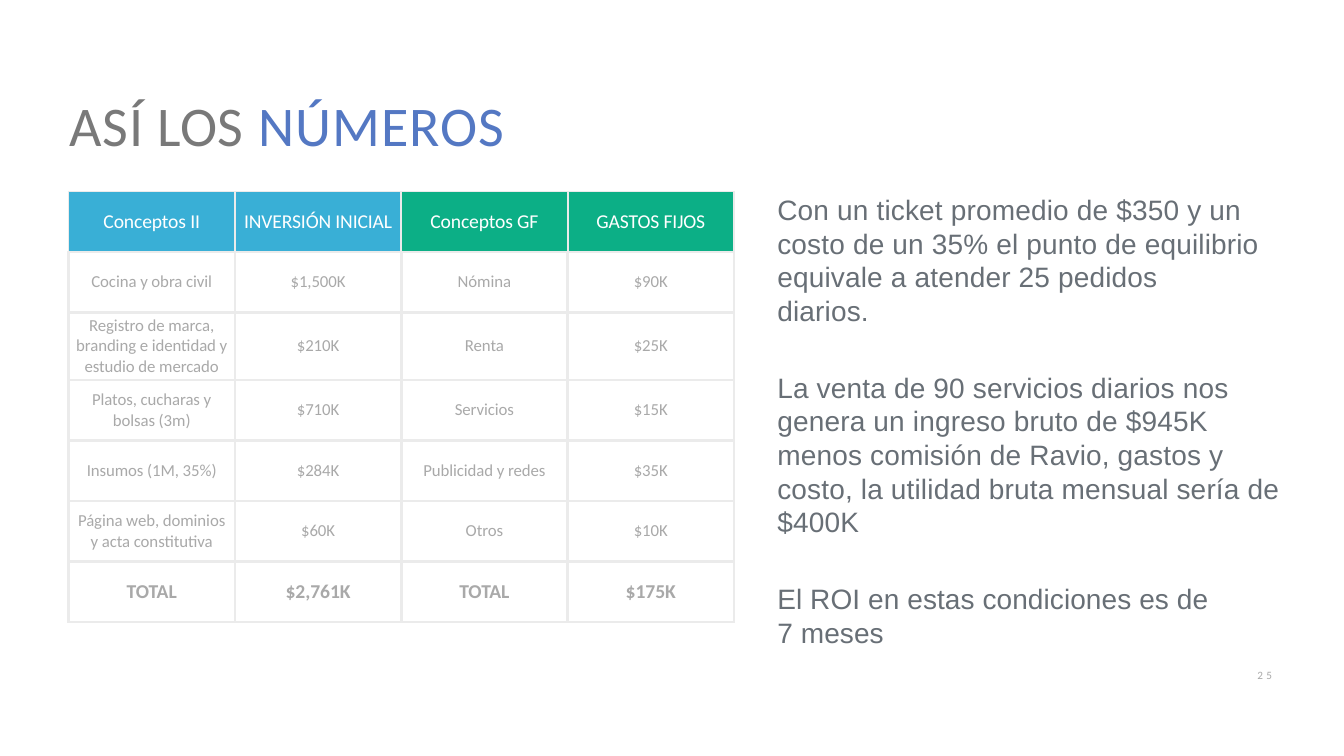
from dataclasses import dataclass

from lxml import etree
from pptx import Presentation
from pptx.dml.color import RGBColor
from pptx.enum.text import MSO_ANCHOR, PP_ALIGN
from pptx.oxml.ns import qn
from pptx.util import Emu, Pt

PX = 9144
CENTER = PP_ALIGN.CENTER
MIDDLE = MSO_ANCHOR.MIDDLE
HUES = {
    "blue": "39AFD6",
    "green": "0CAF86",
    "edge": "EBEBEB",
    "white": "FFFFFF",
    "pale": "A9A9A9",
    "gray": "797979",
    "accent": "5478C3",
    "slate": "686F76",
}


@dataclass(frozen=True)
class Font:
    name: str
    size: int
    hue: str
    space: int = 0
    bold: bool = False


@dataclass(frozen=True)
class Para:
    words: tuple[tuple[str, Font], ...]
    gap: int = 0


@dataclass(frozen=True)
class Box:
    left: int
    top: int
    width: int
    height: int
    paras: tuple[Para, ...]


HEAD = Font("Calibri", 14, "white", -10)
CELL = Font("Calibri", 12, "pale", -7)
TOTAL = Font("Calibri", 14, "pale", -5, True)
BODY = Font("Arial", 20, "slate", 12)
LAST = Font("Arial", 20, "slate", 5)
TITLE = Font("Calibri", 40, "gray", 55)
ACCENT = Font("Calibri", 40, "accent", 80)
PAGE = Font("Calibri", 8, "pale", 30)

ROWS = (
    ("Conceptos II", "INVERSIÓN INICIAL", "Conceptos GF", "GASTOS FIJOS"),
    ("Cocina y obra civil", "$1,500K", "Nómina", "$90K"),
    ("Registro de marca,\nbranding e identidad y\nestudio de mercado", "$210K", "Renta", "$25K"),
    ("Platos, cucharas y\nbolsas (3m)", "$710K", "Servicios", "$15K"),
    ("Insumos (1M, 35%)", "$284K", "Publicidad y redes", "$35K"),
    ("Página web, dominios\ny acta constitutiva", "$60K", "Otros", "$10K"),
    ("TOTAL", "$2,761K", "TOTAL", "$175K"),
)
FILLS = ("blue", "blue", "green", "green")
ROW, TALL, COL = 60, 67, 165

BOXES = (
    Box(1247, 663, 30, 16, (Para((("2 5", PAGE),), 1),)),
    Box(69, 90, 450, 69, (Para((("ASÍ LOS ", TITLE), ("NÚMEROS", ACCENT)), 1),)),
    Box(771, 191, 510, 464, (
        Para((("Con un ticket promedio de $350 y un\n"
               "costo de un 35% el punto de equilibrio\n"
               "equivale a atender 25 pedidos\ndiarios.", BODY),), 1),
        Para((("La venta de 90 servicios diarios nos\n"
               "genera un ingreso bruto de $945K\n"
               "menos comisión de Ravio, gastos y\n"
               "costo, la utilidad bruta mensual sería de", BODY),), 31),
        Para((("$400K", BODY),)),
        Para((("El ROI en estas condiciones es de\n7 meses", LAST),), 31),
    )),
)


def style(run, font: Font) -> None:
    run.font.name = font.name
    run.font.size = Pt(font.size)
    run.font.bold = font.bold
    run.font.color.rgb = RGBColor.from_string(HUES[font.hue])
    run._r.get_or_add_rPr().set("spc", str(font.space))


def edge(cell, width: float) -> None:
    props = cell._tc.get_or_add_tcPr()
    for spot, side in enumerate("LRTB"):
        line = etree.Element(qn(f"a:ln{side}"), w=str(Pt(width)))
        fill = etree.SubElement(line, qn("a:solidFill"))
        etree.SubElement(fill, qn("a:srgbClr"), val=HUES["edge"])
        props.insert(spot, line)


def trim(area) -> None:
    area.margin_left = area.margin_right = 0
    area.margin_top = area.margin_bottom = 0


def draw_box(slide, box: Box) -> None:
    place = (Emu(n * PX) for n in (box.left, box.top, box.width, box.height))
    frame = slide.shapes.add_textbox(*place).text_frame
    trim(frame)
    frame.word_wrap = True
    for i, para in enumerate(box.paras):
        target = frame.add_paragraph() if i else frame.paragraphs[0]
        target.space_before = Pt(para.gap)
        for text, font in para.words:
            start = len(target.runs)
            for j, line in enumerate(text.split("\n")):
                if j:
                    target.add_line_break()
                target.add_run().text = line
            for run in target.runs[start:]:
                style(run, font)


def draw_grid(slide) -> None:
    count, cols = len(ROWS), len(FILLS)
    high = ROW * (count - 1) + TALL
    place = (Emu(n * PX) for n in (68, 190, COL * cols, high))
    table = slide.shapes.add_table(count, cols, *place).table
    table.first_row = False
    table.horz_banding = False
    for col in table.columns:
        col.width = Emu(COL * PX)
    for r, texts in enumerate(ROWS):
        table.rows[r].height = Emu((TALL if r == 2 else ROW) * PX)
        font = HEAD if r == 0 else TOTAL if r == count - 1 else CELL
        for c, text in enumerate(texts):
            cell = table.cell(r, c)
            trim(cell)
            cell.vertical_anchor = MIDDLE
            if r == 0:
                cell.fill.solid()
                cell.fill.fore_color.rgb = RGBColor.from_string(HUES[FILLS[c]])
            else:
                cell.fill.background()
            edge(cell, 2.25 if r else 1.5)
            para = cell.text_frame.paragraphs[0]
            para.text = text
            para.alignment = CENTER
            for run in para.runs:
                style(run, font)


def main() -> None:
    deck = Presentation()
    deck.slide_width, deck.slide_height = Emu(1333 * PX), Emu(750 * PX)
    slide = deck.slides.add_slide(deck.slide_layouts[6])
    draw_grid(slide)
    for box in BOXES:
        draw_box(slide, box)
    deck.save("out.pptx")


if __name__ == "__main__":
    main()
